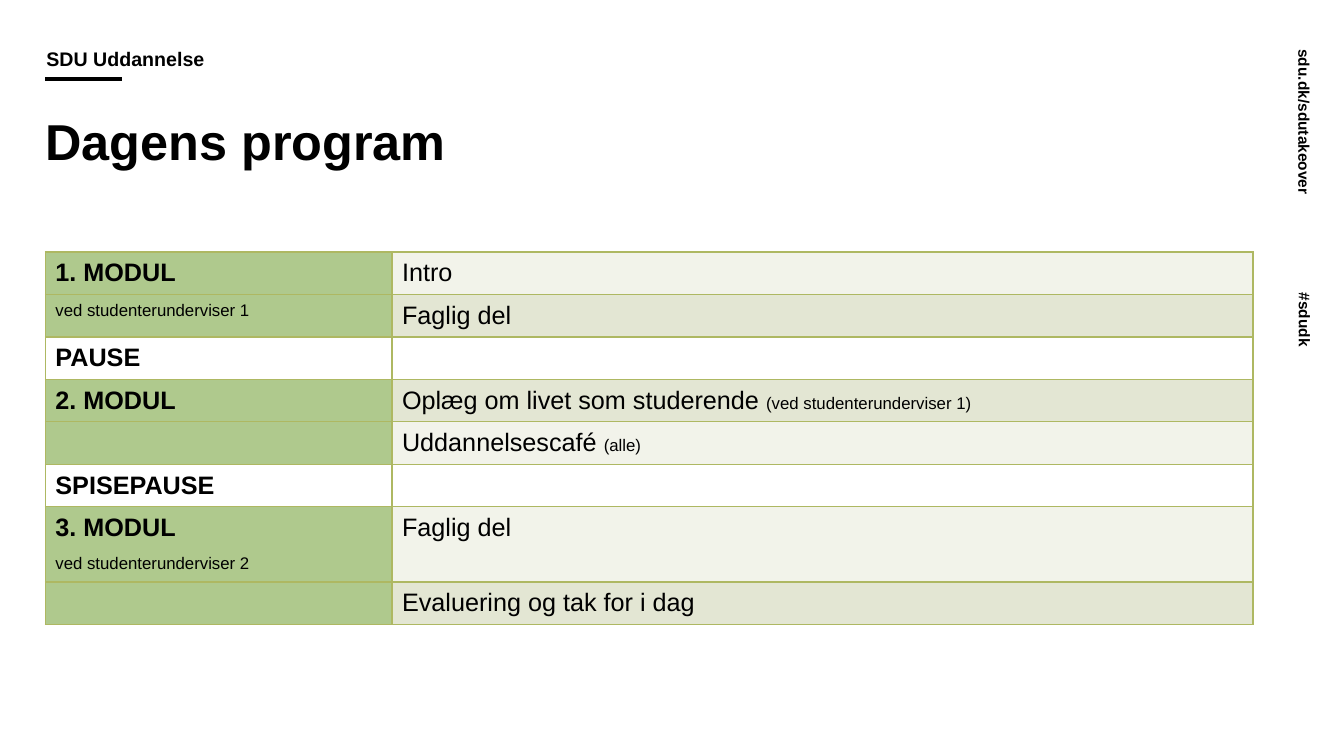
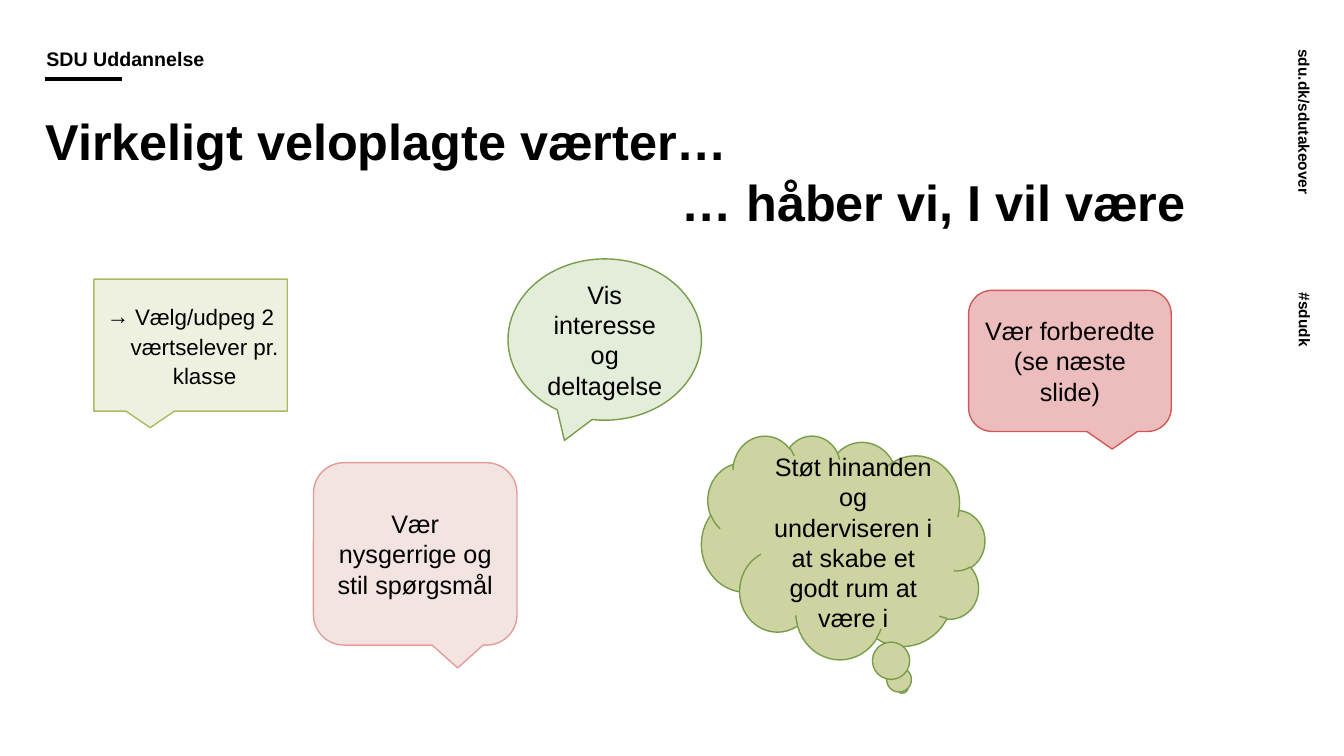
from lxml import etree
from pptx import Presentation
from pptx.dml.color import RGBColor as RGB
from pptx.enum.shapes import MSO_CONNECTOR as Line, MSO_SHAPE as Geo
from pptx.enum.text import MSO_ANCHOR as Anchor, PP_ALIGN as Align
from pptx.oxml.ns import qn
from pptx.util import Pt


class Theme:
    font = "Arial"
    ink = RGB.from_string("000000")
    rule = "AEB862"
    module = "AFC98D"
    light = "F2F3EA"
    dark = "E3E6D3"
    title, head, body, bullet, small, side = 36, 14, 18, 16, 12, 11


def write(frame, paras, align=Align.LEFT, lead=None, after=None):
    """Fill a frame with paragraphs, each a list of (text, size, bold) runs."""
    for i, runs in enumerate(paras):
        para = frame.add_paragraph() if i else frame.paragraphs[0]
        para.alignment = align
        if lead:
            para.line_spacing = lead
        if after:
            para.space_after = Pt(after)
        for text, size, bold in runs:
            run = para.add_run()
            run.text = text
            run.font.name = Theme.font
            run.font.size = Pt(size)
            run.font.bold = bold
            run.font.color.rgb = Theme.ink


def label(slide, at, text, size, inset=(0, 0, 0, 0), anchor=Anchor.TOP, lead=None, turn=0):
    """Add a bold text box; inset is left, top, right, bottom."""
    box = slide.shapes.add_textbox(*map(Pt, at))
    box.rotation = turn
    frame = box.text_frame
    frame.word_wrap = True
    frame.vertical_anchor = anchor
    frame.margin_left, frame.margin_top, frame.margin_right, frame.margin_bottom = map(Pt, inset)
    write(frame, [[(text, size, True)]], lead=lead)


deck = Presentation()
deck.slide_width, deck.slide_height = Pt(960), Pt(540)
left, wide = 32.4, 862.6

# Shared header, side text and title
slides = []
for title in ("Dagens program", "Virkeligt veloplagte værter…"):
    slide = deck.slides.add_slide(deck.slide_layouts[6])
    slides.append(slide)
    for at, text in (
        ((860.4, 100.1, 159.1, 29.5), "sdu.dk/sdutakeover"),
        ((904.3, 230.4, 72, 29.5), "#sdudk"),
    ):
        label(slide, at, text, Theme.side, anchor=Anchor.BOTTOM, turn=90)
    bar = slide.shapes.add_connector(Line.STRAIGHT, Pt(left), Pt(56.3), Pt(87.3), Pt(56.3))
    bar.line.color.rgb = Theme.ink
    bar.line.width = Pt(3)
    etree.SubElement(bar._element.spPr, qn("a:effectLst"))
    label(slide, (left, 35.3, 448, 22.3), "SDU Uddannelse", Theme.head,
          (0.7, 0, 0, 7.2), Anchor.BOTTOM, 0.9)
    label(slide, (left, 78.5, wide, 55.4), title, Theme.title)
agenda, hosts = slides

# Programme table: left paragraphs, right paragraphs, fills
big, small = Theme.body, Theme.small
green, light, dark = Theme.module, Theme.light, Theme.dark
rows = [
    ([[("1. MODUL", big, True)]], [[("Intro", big, False)]], green, light),
    ([[("ved studenterunderviser 1", small, False)]], [[("Faglig del", big, False)]], green, dark),
    ([[("PAUSE", big, True)]], [], None, None),
    ([[("2. MODUL", big, True)]],
     [[("Oplæg om livet som studerende ", big, False),
       ("(ved studenterunderviser 1)", small, False)]], green, dark),
    ([], [[("Uddannelsescafé ", big, False), ("(alle)", small, False)]], green, light),
    ([[("SPISEPAUSE", big, True)]], [], None, None),
    ([[("3. MODUL", big, True)], [("ved studenterunderviser 2", small, False)]],
     [[("Faglig del", big, False)]], green, light),
    ([], [[("Evaluering og tak for i dag", big, False)]], green, dark),
]
grid = agenda.shapes.add_table(len(rows), 2, Pt(left), Pt(180), Pt(wide), Pt(256.3)).table
grid.first_row = grid.horz_banding = False
grid.columns[0].width, grid.columns[1].width = Pt(247.6), Pt(615)
for r, (*texts, first, second) in enumerate(rows):
    grid.rows[r].height = Pt(52.6 if len(texts[0]) > 1 else 29.1)
    for c, fill in enumerate((first, second)):
        cell = grid.cell(r, c)
        write(cell.text_frame, texts[c], lead=1.07, after=8)
        props = cell._tc.get_or_add_tcPr()
        for side in ("lnL", "lnR", "lnT", "lnB"):
            edge = etree.SubElement(props, qn(f"a:{side}"), w=str(Pt(1)))
            paint = etree.SubElement(edge, qn("a:solidFill"))
            etree.SubElement(paint, qn("a:srgbClr"), val=Theme.rule)
        if fill:
            cell.fill.solid()
            cell.fill.fore_color.rgb = RGB.from_string(fill)
        else:
            cell.fill.background()

# Callouts: shape, place, fill, line, flipped, bulleted, paragraphs
label(hosts, (480, 114.5, 480, 51.8), "… håber vi, I vil være", Theme.title,
      (7.2, 3.6, 7.2, 3.6), lead=1.1)
calls = [
    (Geo.RECTANGULAR_CALLOUT, (67, 199.4, 138.2, 94.3), "EFF1E0", Theme.rule, False, True,
     ["Vælg/udpeg 2 værtselever pr. klasse"]),
    (Geo.OVAL_CALLOUT, (362.9, 185, 138.2, 115.2), "E4EDD9", "789D4A", False, False,
     ["Vis interesse og deltagelse"]),
    (Geo.ROUNDED_RECTANGULAR_CALLOUT, (691.9, 207.4, 144.7, 100.8), "ECBDBC", "D05A57", True, False,
     ["Vær forberedte", "(se næste slide)"]),
    (Geo.ROUNDED_RECTANGULAR_CALLOUT, (223.9, 330.5, 145.4, 130.3), "F3E4E1", "E39C9A", True, False,
     ["Vær nysgerrige og stil spørgsmål"]),
    (Geo.CLOUD_CALLOUT, (501.1, 311, 202.3, 159.8), "CED4A1", "789D4A", True, False,
     ["Støt hinanden og underviseren i at skabe et godt rum at være i"]),
]
for geo, at, fill, line, flip, mark, lines in calls:
    call = hosts.shapes.add_shape(geo, *map(Pt, at))
    call.shadow.inherit = False
    call.fill.solid()
    call.fill.fore_color.rgb = RGB.from_string(fill)
    call.line.color.rgb = RGB.from_string(line)
    call.line.width = Pt(1)
    if flip:
        call._element.spPr.find(qn("a:xfrm")).set("flipH", "1")
    frame = call.text_frame
    frame.word_wrap = True
    frame.vertical_anchor = Anchor.MIDDLE
    frame.margin_left = frame.margin_top = frame.margin_right = frame.margin_bottom = Pt(5.8)
    if mark:
        props = frame.paragraphs[0]._p.get_or_add_pPr()
        props.set("marL", str(Pt(20)))
        props.set("indent", str(-Pt(20)))
        etree.SubElement(props, qn("a:buFont"), typeface=Theme.font)
        etree.SubElement(props, qn("a:buChar"), char="→")
    size = Theme.bullet if mark else Theme.body
    write(frame, [[(text, size, False)] for text in lines], Align.CENTER, 1.1 if mark else None)

deck.save("out.pptx")
